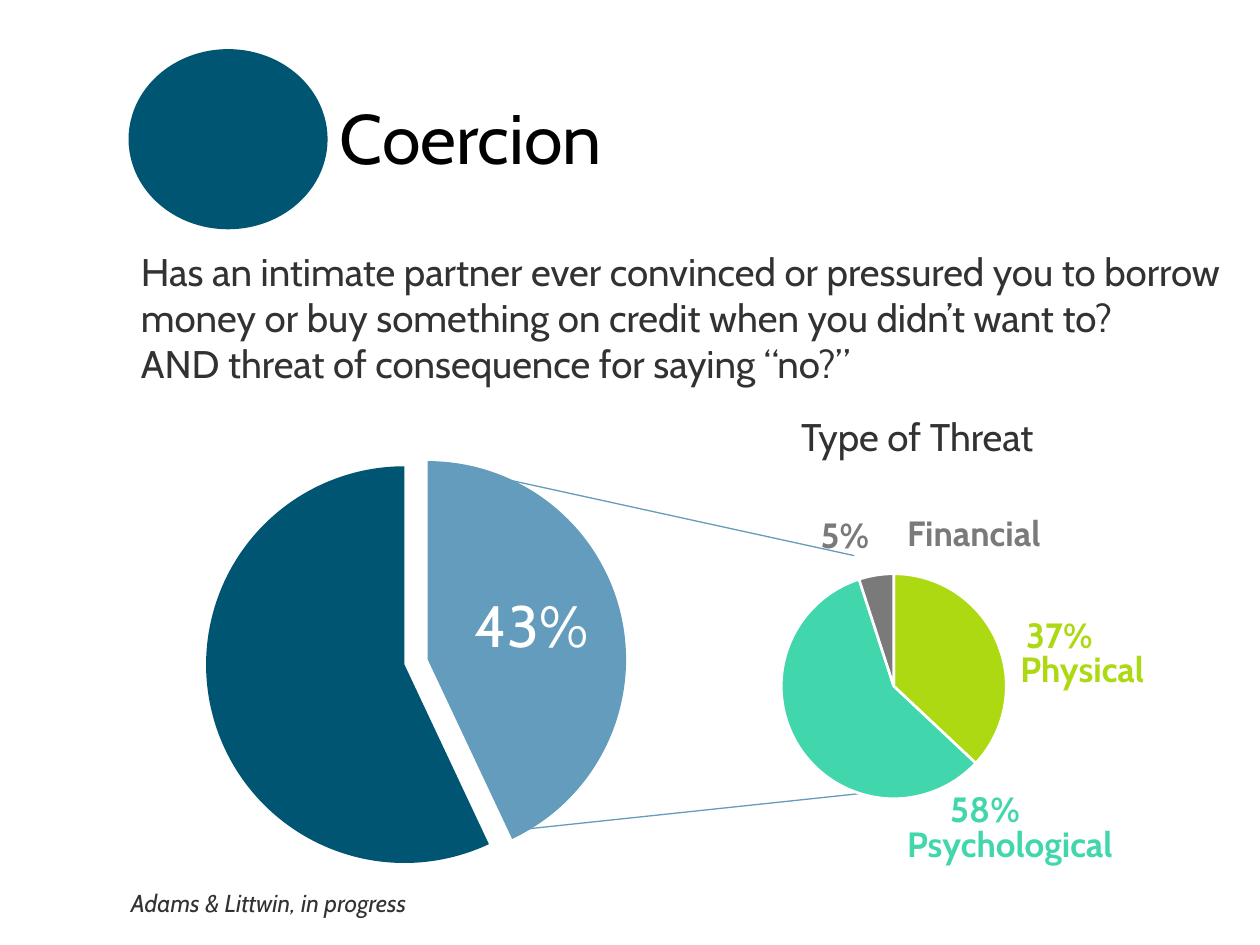
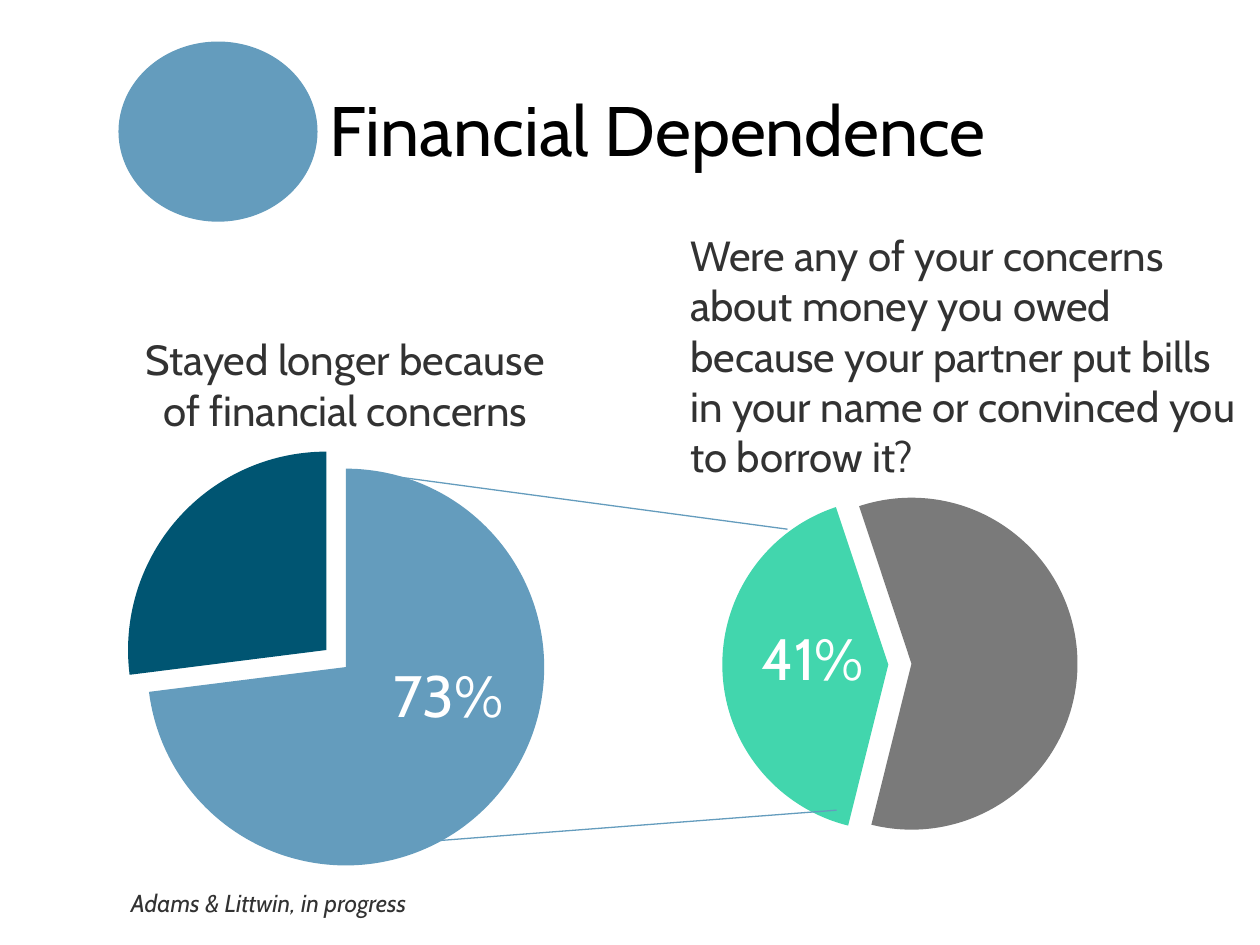
import pptx
import pptx.chart.data
import pptx.dml.color
import pptx.enum.chart
import pptx.enum.shapes
import pptx.enum.text
import pptx.oxml
import pptx.oxml.ns
import pptx.util
from lxml import etree
from pptx.util import Inches

# Shared style
FONT = "Cabin"
NAVY, BLUE, MINT, LIME, GRAY = "005572", "649CBD", "42D6AD", "ADD912", "7A7A7A"
INK, BLACK, WHITE = "323232", "000000", "FFFFFF"
SOURCE = "Adams & Littwin, in progress"
qn = pptx.oxml.ns.qn


def rgb(color):
    return pptx.dml.color.RGBColor.from_string(color)


def style_font(font, size, color, bold=False, italic=False):
    font.name = FONT
    font.size = pptx.util.Pt(size)
    font.color.rgb = rgb(color)
    font.bold = bold
    font.italic = italic


# Text and shapes
def add_text(s, box, text, size, color=INK, center=False, **style):
    tf = s.shapes.add_textbox(*map(Inches, box)).text_frame
    tf.word_wrap = True
    tf.text = text
    p = tf.paragraphs[0]
    if center:
        p.alignment = pptx.enum.text.PP_ALIGN.CENTER
    for r in p.runs:
        style_font(r.font, size, color, **style)


def add_percent(s, left, top, text):
    add_text(s, (left, top, 1.64, 0.66), text, 33.3, WHITE, center=True)


def add_title(s, left, top, text, color):
    """Title text beside a coloured disc at left, top."""
    sp = s.shapes.add_shape(pptx.enum.shapes.MSO_SHAPE.OVAL, Inches(left),
                            Inches(top), Inches(1.58), Inches(1.43))
    sp.shadow.inherit = False
    sp.fill.solid()
    sp.fill.fore_color.rgb = rgb(color)
    sp.line.fill.background()
    add_text(s, (left + 1.58, top + 0.31, 6.64, 0.77), text, 40, BLACK)


def add_source(s):
    add_text(s, (0.94, 7, 6.75, 0.34), SOURCE, 14, italic=True)


def add_guide(s, start, end):
    line = s.shapes.add_connector(pptx.enum.shapes.MSO_CONNECTOR.STRAIGHT,
                                  *map(Inches, start + end))
    line.line.color.rgb = rgb(BLUE)
    line.line.width = pptx.util.Pt(0.75)
    etree.SubElement(line._element.spPr, qn("a:effectLst"))


# Charts
def manual_layout(inner=False, **places):
    layout = etree.Element(qn("c:layout"))
    manual = etree.SubElement(layout, qn("c:manualLayout"))
    settings = {}
    if inner:
        settings = {"layoutTarget": "inner", "xMode": "edge", "yMode": "edge"}
    for name, value in {**settings, **places}.items():
        etree.SubElement(manual, qn("c:" + name)).set("val", str(value))
    return layout


def add_pie(s, box, values, colors, plot, start=0, explosion=0, edge=None,
            number_format="General"):
    """Pie in box; plot is its left, top, width, height as shares of the box."""
    data = pptx.chart.data.CategoryChartData(number_format=number_format)
    data.categories = [str(i + 1) for i in range(len(values))]
    data.add_series("Series 1", values)
    chart = s.shapes.add_chart(pptx.enum.chart.XL_CHART_TYPE.PIE,
                               *map(Inches, box), data).chart
    chart.has_legend = False
    chart.has_title = False
    style_font(chart.font, 10, BLACK)
    pie = chart.plots[0]
    pie.vary_by_categories = True
    for i, color in enumerate(colors):
        fmt = pie.series[0].points[i].format
        fmt.fill.solid()
        fmt.fill.fore_color.rgb = rgb(color)
        if edge:
            fmt.line.color.rgb = rgb(edge)
            fmt.line.width = pptx.util.Pt(1.5)
        else:
            fmt.line.fill.background()

    # Pull out the last slice, turn the pie and place it
    plot_area = chart._chartSpace.find(".//" + qn("c:plotArea"))
    if explosion:
        fill = plot_area.findall(".//" + qn("c:dPt"))[-1].find(qn("c:spPr"))
        pull = etree.Element(qn("c:explosion"))
        pull.set("val", str(explosion))
        fill.addprevious(pull)
    pie_xml = plot_area.find(qn("c:pieChart"))
    angle = pie_xml.find(qn("c:firstSliceAng"))
    if angle is None:
        angle = etree.SubElement(pie_xml, qn("c:firstSliceAng"))
    angle.set("val", str(start))
    for old in plot_area.findall(qn("c:layout")):
        plot_area.remove(old)
    plot_area.insert(0, manual_layout(True, **dict(zip("xywh", plot))))
    return chart


def label_slices(chart, colors, shifts):
    """Bold value labels in the slice colours, each moved by its shift."""
    series = chart.plots[0].series[0]
    for i, color in enumerate(colors):
        label = series.points[i].data_label
        style_font(label.font, 20, color, bold=True)
        label.position = pptx.enum.chart.XL_LABEL_POSITION.OUTSIDE_END
    labels = series._element.find(qn("c:dLbls"))
    for item, (x, y) in zip(labels.findall(qn("c:dLbl")), shifts):
        item.find(qn("c:idx")).addnext(manual_layout(x=x, y=y))
    for leader in labels.findall(qn("c:showLeaderLines")):
        leader.set("val", "0")


# Slides
def coercion(s):
    add_guide(s, (3.63, 3.72), (6.78, 4.41))
    add_guide(s, (4.08, 6.59), (7.28, 6.25))
    add_title(s, 1.02, 0.39, "Coercion", NAVY)
    add_text(s, (1.02, 1.92, 8.79, 1.21),
             "Has an intimate partner ever convinced or pressured you to borrow "
             "money or buy something on credit when you didn’t want to?\v"
             "AND threat of consequence for saying “no?”", 22)
    add_pie(s, (0.68, 3.51, 5.43, 3.45), (43, 57), (BLUE, NAVY),
            (0.21, 0.04, 0.58, 0.92), explosion=12)
    add_percent(s, 3.4, 4.63, "43%")

    threat_colors = (LIME, MINT, GRAY)
    threats = add_pie(s, (4.9, 4.01, 4.41, 2.59), (0.37, 0.58, 0.05),
                      threat_colors, (0.295, 0.21, 0.405, 0.69), edge=WHITE,
                      number_format="0%")
    label_slices(threats, threat_colors,
                 ((0.04, 0.06), (0.41, 0.14), (-0.01, -0.03)))
    add_text(s, (5.47, 3.23, 3.62, 0.47), "Type of Threat", 22, center=True)
    for left, top, name, color in ((7.1, 6.48, "Psychological", MINT),
                                   (8, 5.09, "Physical", LIME),
                                   (7.1, 4.01, "Financial", GRAY)):
        add_text(s, (left, top, 2.12, 0.44), name, 20, color, bold=True)
    add_source(s)


def financial_dependence(s):
    add_title(s, 0.94, 0.33, "Financial Dependence", BLUE)
    add_text(s, (5.38, 1.77, 4.61, 2.12),
             "Were any of your concerns about money you owed because your "
             "partner put bills in your name or convinced you to borrow it?", 24)
    add_pie(s, (4.89, 3.82, 4.32, 2.91), (41, 59), (MINT, GRAY),
            (0.195, 0.045, 0.61, 0.91), start=194, explosion=14)
    add_percent(s, 5.63, 4.89, "41%")
    add_pie(s, (0.03, 3.57, 5.43, 3.45), (73, 27), (BLUE, NAVY),
            (0.21, 0.04, 0.58, 0.92), explosion=13)
    add_percent(s, 2.74, 5.18, "73%")
    add_text(s, (0.99, 2.6, 3.5, 0.91),
             "Stayed longer because of financial concerns", 24, center=True)
    add_guide(s, (2.82, 3.74), (6.25, 4.2))
    add_guide(s, (3.37, 6.68), (6.64, 6.43))
    add_source(s)


def main():
    prs = pptx.Presentation()
    prs.slide_width, prs.slide_height = Inches(10), Inches(7.5)
    for build in (coercion, financial_dependence):
        build(prs.slides.add_slide(prs.slide_layouts[6]))
    prs.save("out.pptx")


if __name__ == "__main__":
    main()
